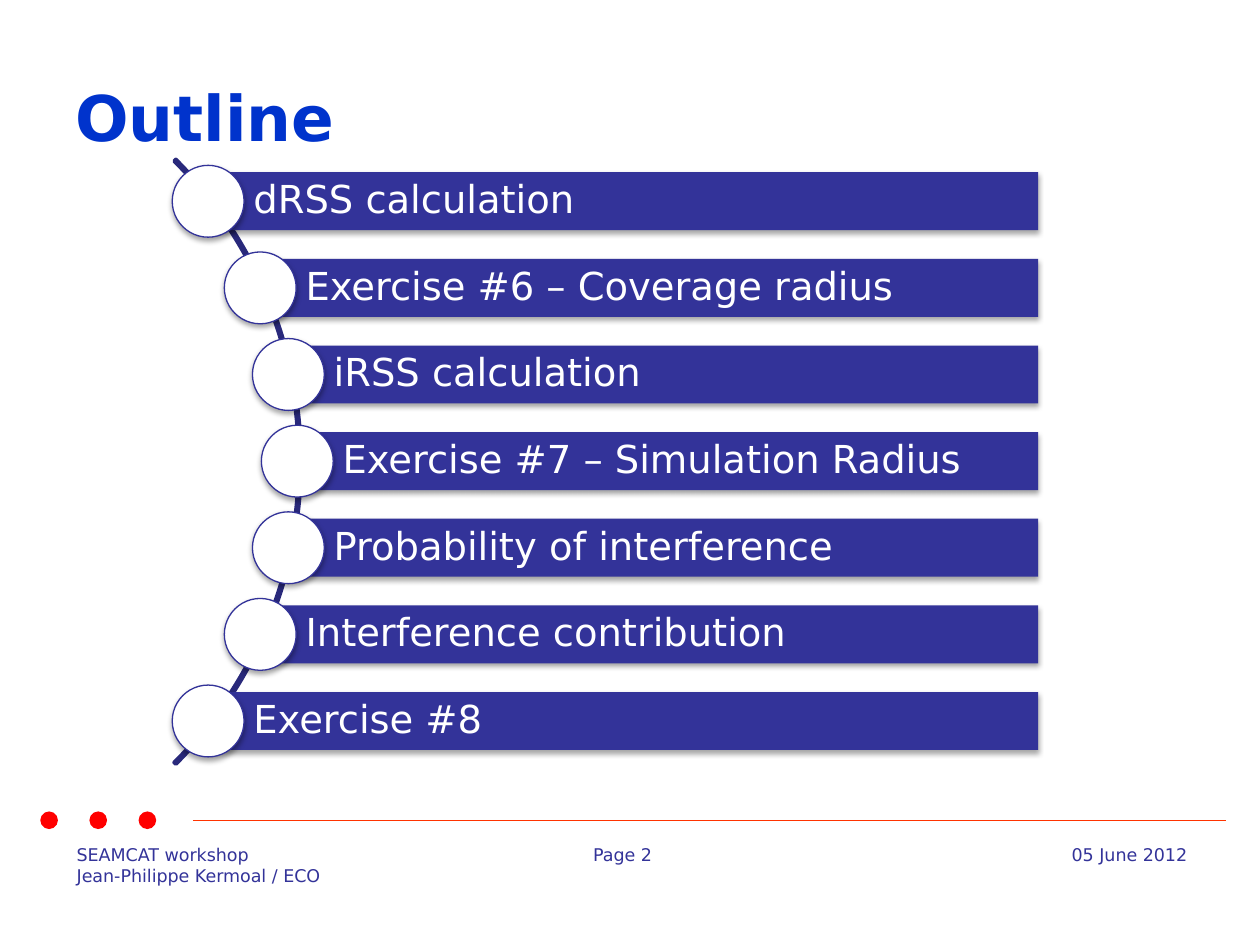
from dataclasses import dataclass
from math import sqrt

from lxml.etree import SubElement
from pptx import Presentation
from pptx.dml.color import RGBColor
from pptx.enum.shapes import MSO_CONNECTOR, MSO_SHAPE
from pptx.enum.text import MSO_ANCHOR, PP_ALIGN
from pptx.oxml.ns import qn
from pptx.util import Inches, Pt


@dataclass(frozen=True)
class Theme:
    font: str = "DejaVu Sans"
    title_color: RGBColor = RGBColor(0x00, 0x33, 0xCC)
    bar: RGBColor = RGBColor(0x33, 0x33, 0x99)
    arc: RGBColor = RGBColor(0x29, 0x29, 0x7B)
    dot: RGBColor = RGBColor(0xFF, 0x00, 0x00)
    rule: RGBColor = RGBColor(0xFF, 0x33, 0x00)
    white: RGBColor = RGBColor(0xFF, 0xFF, 0xFF)
    title_size: Pt = Pt(36)
    item_size: Pt = Pt(22)
    footer_size: Pt = Pt(10)


theme = Theme()
presentation = Presentation()
presentation.slide_width, presentation.slide_height = Inches(10), Inches(7.5)
slide = presentation.slides.add_slide(presentation.slide_layouts[6])


def add_shape(kind, left, top, width, height, fill=None, line=None, line_width=0.75, shadow=False):
    shape = slide.shapes.add_shape(kind, Inches(left), Inches(top), Inches(width), Inches(height))
    if fill is None:
        shape.fill.background()
    else:
        shape.fill.solid()
        shape.fill.fore_color.rgb = fill
    if line is None:
        shape.line.fill.background()
    else:
        shape.line.color.rgb = line
        shape.line.width = Pt(line_width)
    shape.shadow.inherit = False
    if shadow:
        effects = shape._element.spPr.find(qn("a:effectLst"))
        outer = SubElement(effects, qn("a:outerShdw"), blurRad=str(Pt(3.1)), dist=str(Pt(1.8)),
                           dir="5400000", rotWithShape="0")
        color = SubElement(outer, qn("a:srgbClr"), val="000000")
        SubElement(color, qn("a:alpha"), val="35000")
    return shape


def write(shape, lines, size, color, align=PP_ALIGN.LEFT, anchor=MSO_ANCHOR.TOP, bold=False):
    frame = shape.text_frame
    frame.word_wrap = True
    frame.vertical_anchor = anchor
    frame.text = "\n".join(lines)
    for paragraph in frame.paragraphs:
        paragraph.alignment = align
        paragraph.font.name = theme.font
        paragraph.font.size = size
        paragraph.font.bold = bold
        paragraph.font.color.rgb = color


# Footer texts
footers = [
    (0.51, 2.21, 0.43, ["SEAMCAT workshop", "Jean-Philippe Kermoal / ECO"], PP_ALIGN.LEFT),
    (4.61, 0.82, 0.27, ["Page 2"], PP_ALIGN.LEFT),
    (7.73, 1.79, 0.27, ["05 June 2012"], PP_ALIGN.RIGHT),
]
for left, width, height, lines, align in footers:
    box = slide.shapes.add_textbox(Inches(left), Inches(6.65), Inches(width), Inches(height))
    write(box, lines, theme.footer_size, theme.bar, align)

# Footer rule and dots
rule = slide.shapes.add_connector(
    MSO_CONNECTOR.STRAIGHT, Inches(1.53), Inches(6.51), Inches(9.73), Inches(6.51))
rule.line.color.rgb = theme.rule
rule.line.width = Pt(0.75)
SubElement(rule._element.spPr, qn("a:effectLst"))
for index in range(3):
    add_shape(MSO_SHAPE.OVAL, 0.32 + 0.39 * index, 6.44, 0.14, 0.14, theme.dot)

# Title
title = slide.shapes.add_textbox(Inches(0.5), Inches(0.3), Inches(9), Inches(1.25))
write(title, ["Outline"], theme.title_size, theme.title_color, anchor=MSO_ANCHOR.MIDDLE, bold=True)

# Arc behind the list
arc = add_shape(MSO_SHAPE.BLOCK_ARC, -4.4, 0.27, 6.79, 6.79, line=theme.arc, line_width=2)
for index, value in enumerate((189, 27, 0.003)):
    arc.adjustments[index] = value

# List items: each bar starts at the centre of its circle, which lies on the arc
items = [
    "dRSS calculation",
    "Exercise #6 – Coverage radius",
    "iRSS calculation",
    "Exercise #7 – Simulation Radius",
    "Probability of interference",
    "Interference contribution",
    "Exercise #8",
]
center_x, center_y, radius, pitch = -1, 3.66, 3.36, 0.6875
bar_right, bar_height, circle_size = 8.24, 0.46, 0.57
for index, item in enumerate(items):
    offset = (index - len(items) // 2) * pitch
    x = center_x + sqrt(radius ** 2 - offset ** 2)
    y = center_y + offset
    bar = add_shape(MSO_SHAPE.RECTANGLE, x, y - bar_height / 2, bar_right - x, bar_height,
                    theme.bar, shadow=True)
    write(bar, [item], theme.item_size, theme.white, anchor=MSO_ANCHOR.MIDDLE)
    frame = bar.text_frame
    frame.margin_left = Inches(0.36)
    frame.margin_top = frame.margin_right = frame.margin_bottom = Inches(0.06)
    frame.paragraphs[0].line_spacing = 0.9
    add_shape(MSO_SHAPE.OVAL, x - circle_size / 2, y - circle_size / 2, circle_size, circle_size,
              theme.white, theme.bar, shadow=True)

presentation.save("out.pptx")
